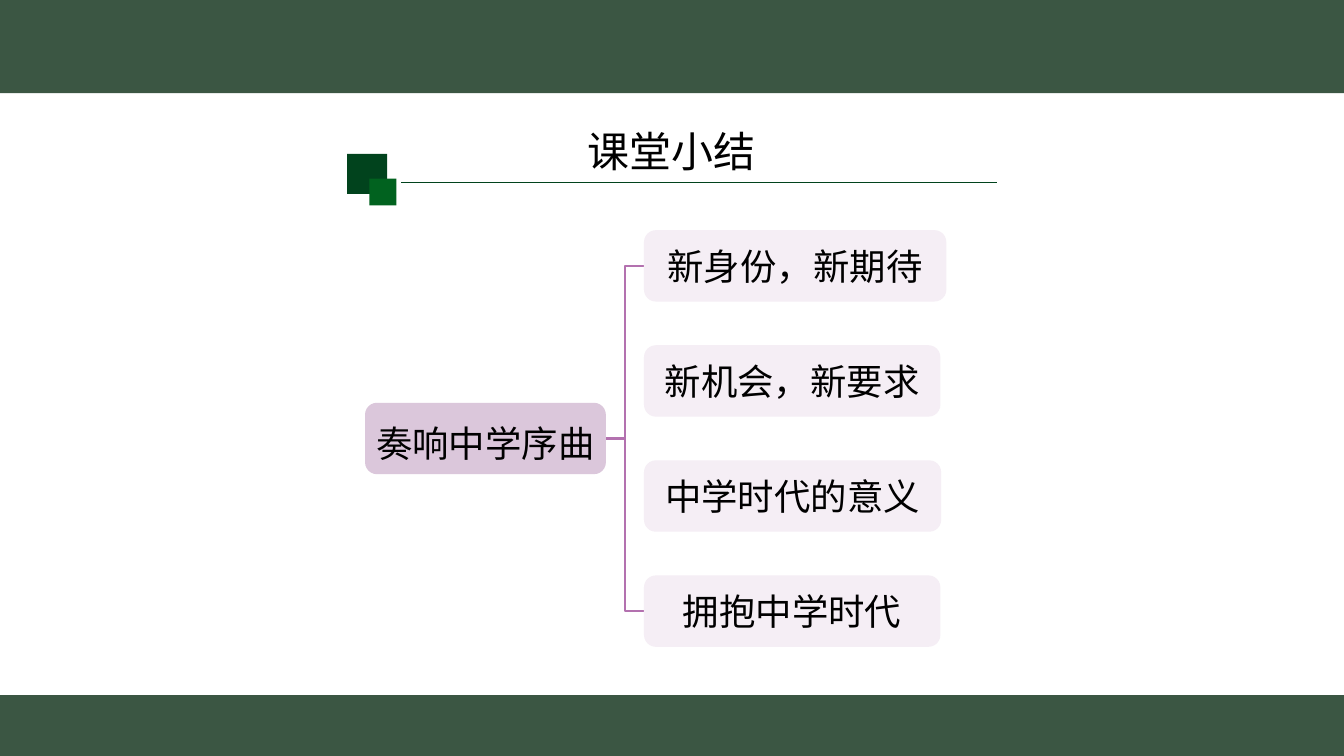
from pptx import Presentation
from pptx import util as u
from pptx.dml.color import RGBColor
from pptx.enum import shapes, text
from pptx.oxml.ns import qn
from lxml import etree

BAND = RGBColor(0x3B, 0x56, 0x43)
DARK = RGBColor(0x01, 0x43, 0x1D)
GREEN = RGBColor(0x01, 0x62, 0x1F)
PLUM = RGBColor(0xB3, 0x71, 0xAF)
ROOT = RGBColor(0xDB, 0xC7, 0xDB)
LEAF = RGBColor(0xF5, 0xEE, 0xF5)
BLACK = RGBColor(0, 0, 0)
SANS = "Noto Sans CJK SC"
SERIF = "Times New Roman"
WIDE, HIGH = 33.87, 19.05
KIND = shapes.MSO_SHAPE


def write(shape, words, size=26, font=SANS, space=1.0, wrap=True,
          anchor=text.MSO_ANCHOR.MIDDLE):
    frame = shape.text_frame
    frame.word_wrap = wrap
    frame.auto_size = text.MSO_AUTO_SIZE.NONE
    frame.vertical_anchor = anchor
    frame.margin_left = frame.margin_right = u.Cm(0.1)
    frame.margin_top = frame.margin_bottom = u.Cm(0.13)
    para = frame.paragraphs[0]
    para.alignment = text.PP_ALIGN.CENTER
    para.line_spacing = space
    run = para.add_run()
    run.text = words
    run.font.size = u.Pt(size)
    run.font.name = font
    run.font.color.rgb = BLACK
    east = etree.SubElement(run.font._element, qn("a:ea"))
    east.set("typeface", SANS)


class Page:
    def __init__(self):
        self.deck = Presentation()
        self.deck.slide_width = u.Cm(WIDE)
        self.deck.slide_height = u.Cm(HIGH)
        self.slide = self.deck.slides.add_slide(self.deck.slide_layouts[5])

    def title(self, words, *box):
        head = self.slide.shapes.title
        head.left, head.top, head.width, head.height = map(u.Cm, box)
        write(head, words, size=30, space=0.9, anchor=text.MSO_ANCHOR.TOP)

    def block(self, color, *box, kind=KIND.RECTANGLE):
        shape = self.slide.shapes.add_shape(kind, *map(u.Cm, box))
        shape.shadow.inherit = False
        shape.fill.solid()
        shape.fill.fore_color.rgb = color
        shape.line.fill.background()
        return shape

    def node(self, words, color, *box, **style):
        shape = self.block(color, *box, kind=KIND.ROUNDED_RECTANGLE)
        write(shape, words, **style)

    def brace(self, color, *box):
        shape = self.slide.shapes.add_shape(KIND.LEFT_BRACE, *map(u.Cm, box))
        shape.shadow.inherit = False
        shape.adjustments[0] = 0
        shape.adjustments[1] = 0.5
        shape.fill.background()
        shape.line.color.rgb = color
        shape.line.width = u.Pt(1.75)

    def rule(self, color, *ends):
        line = self.slide.shapes.add_connector(
            shapes.MSO_CONNECTOR.STRAIGHT, *map(u.Cm, ends))
        line.line.color.rgb = color
        line.line.width = u.Pt(1)
        etree.SubElement(line._element.spPr, qn("a:effectLst"))


def main():
    page = Page()
    page.block(BAND, 0, 0, WIDE, 2.35)
    page.block(BAND, 0, 17.52, WIDE, 1.53)
    page.rule(DARK, 10.11, 4.6, 25.12, 4.6)
    page.block(DARK, 8.75, 3.88, 1.01, 1.01)
    page.block(GREEN, 9.31, 4.5, 0.68, 0.68)
    page.title("课堂小结", 5.53, 3.18, 22.81, 1.6)

    left, top, high, step = 16.23, 5.8, 1.8, 2.9
    leaves = [
        ("新身份，新期待", 7.62, SANS),
        ("新机会，新要求", 7.47, SANS),
        ("中学时代的意义", 7.49, SERIF),
        ("拥抱中学时代", 7.47, SANS),
    ]
    span = step * (len(leaves) - 1)
    page.brace(PLUM, 15.27, top + high / 2, 0.97, span)
    page.node("奏响中学序曲", ROOT, 9.2, top + span / 2, 6.07, high,
              space=1.2, wrap=False)
    for row, (words, wide, font) in enumerate(leaves):
        page.node(words, LEAF, left, top + row * step, wide, high, font=font)

    page.deck.save("out.pptx")


if __name__ == "__main__":
    main()
